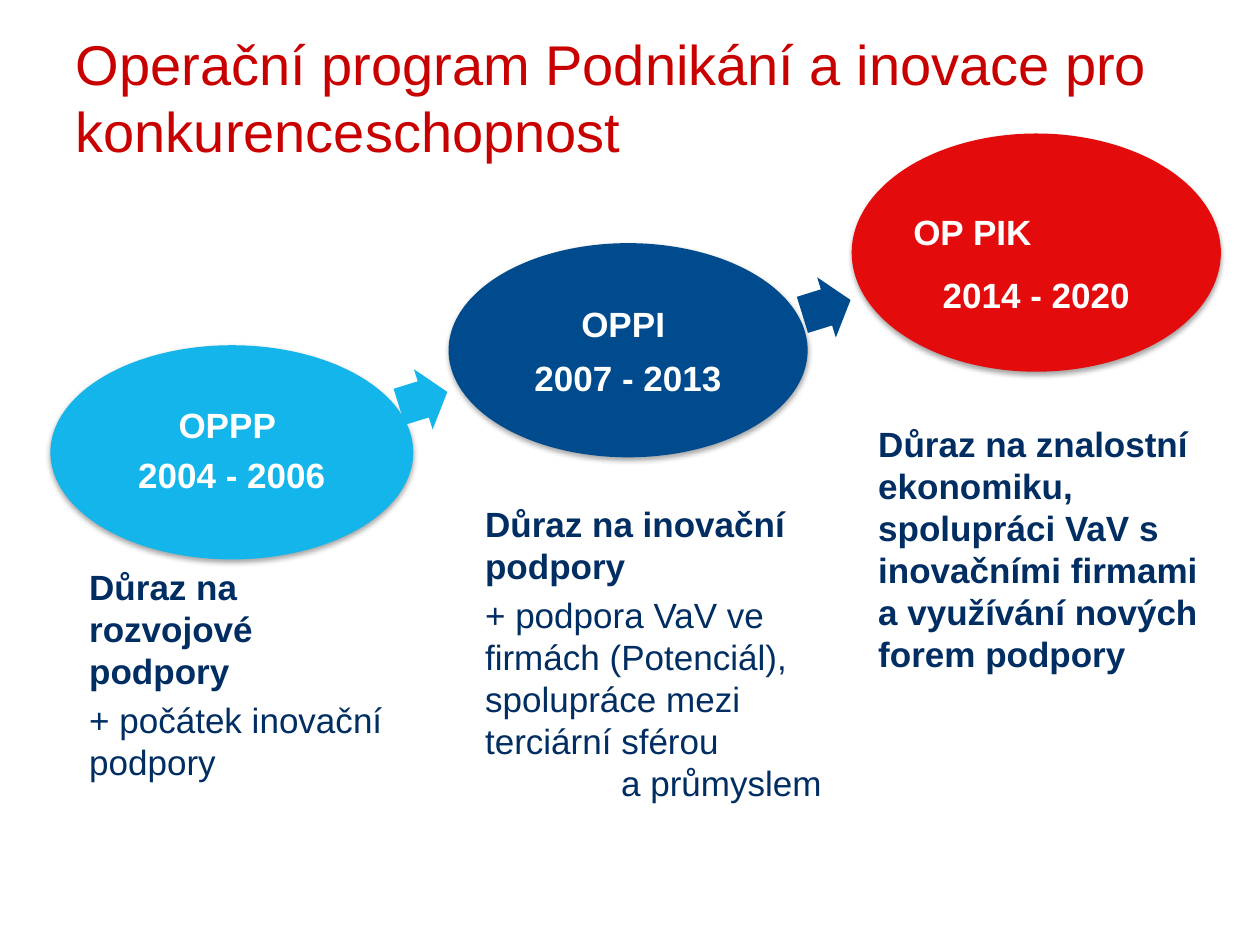
from lxml.etree import SubElement
from pptx import Presentation
from pptx.dml.color import RGBColor
from pptx.enum.shapes import MSO_SHAPE
from pptx.enum.text import MSO_ANCHOR, MSO_AUTO_SIZE, PP_ALIGN
from pptx.oxml.ns import qn
from pptx.util import Inches, Pt

THEME = {
    "font": "Arial",
    "title_size": Pt(32),
    "text_size": Pt(20),
    "title": RGBColor.from_string("C90000"),
    "text": RGBColor.from_string("002D62"),
    "on_fill": RGBColor.from_string("FFFFFF"),
    "light_blue": RGBColor.from_string("13B5EA"),
    "dark_blue": RGBColor.from_string("004B8D"),
    "red": RGBColor.from_string("E30B0B"),
    "shadow": "000000",
}


def add_text(paragraph, text, color, size=THEME["text_size"], bold=False):
    run = paragraph.add_run()
    run.text = text
    run.font.name = THEME["font"]
    run.font.size = size
    run.font.bold = bold
    run.font.color.rgb = color


def add_filled_shape(kind, box, color):
    shape = slide.shapes.add_shape(kind, *map(Inches, box))
    shape.shadow.inherit = False
    shape.fill.solid()
    shape.fill.fore_color.rgb = color
    shape.line.fill.background()
    return shape


presentation = Presentation()
presentation.slide_width = Inches(10)
presentation.slide_height = Inches(7.5)
slide = presentation.slides.add_slide(presentation.slide_layouts[5])

# Title
title = slide.shapes.title
title.left, title.top, title.width, title.height = map(Inches, (0.5, 0.3, 8.99, 0.93))
title.text_frame.auto_size = MSO_AUTO_SIZE.NONE
title.text_frame.vertical_anchor = MSO_ANCHOR.MIDDLE
paragraph = title.text_frame.paragraphs[0]
paragraph.alignment = PP_ALIGN.LEFT
add_text(paragraph, "Operační program Podnikání a inovace pro konkurenceschopnost",
         THEME["title"], THEME["title_size"])

# Programme ovals: box, colour, line spacing, space after, name alignment, lines
programmes = [
    ((0.4, 2.74, 2.88, 1.7), "light_blue", 0.9, 7, PP_ALIGN.CENTER, ("OPPP ", "2004 - 2006")),
    ((3.56, 1.93, 2.85, 1.7), "dark_blue", 1.0, 7, PP_ALIGN.CENTER, ("OPPI ", "2007 - 2013")),
    ((6.76, 1.06, 2.93, 1.89), "red", 1.5, 0, PP_ALIGN.LEFT, ("OP PIK", "2014 - 2020")),
]
for box, color, spacing, space_after, name_alignment, lines in programmes:
    oval = add_filled_shape(MSO_SHAPE.OVAL, box, THEME[color])

    # Soft shadow below the oval
    effects = oval._element.spPr.find(qn("a:effectLst"))
    shadow = SubElement(effects, qn("a:outerShdw"), blurRad=str(Pt(3.1)),
                        dist=str(Pt(1.8)), dir="5400000", rotWithShape="0")
    shadow_color = SubElement(shadow, qn("a:srgbClr"), val=THEME["shadow"])
    SubElement(shadow_color, qn("a:alpha"), val="35000")

    frame = oval.text_frame
    frame.word_wrap = True
    frame.vertical_anchor = MSO_ANCHOR.MIDDLE
    frame.margin_left = frame.margin_right = Inches(0)
    frame.margin_top = frame.margin_bottom = Inches(0)
    name, years = frame.paragraphs[0], frame.add_paragraph()
    name.alignment, years.alignment = name_alignment, PP_ALIGN.CENTER
    if name_alignment == PP_ALIGN.LEFT:
        name._p.get_or_add_pPr().set("marL", str(Inches(0.06)))
    for paragraph, line in zip((name, years), lines):
        paragraph.line_spacing = spacing
        paragraph.space_after = Pt(space_after)
        add_text(paragraph, line, THEME["on_fill"], bold=True)

# Descriptions: box, left and top margin, paragraphs (text, bold, space before, indent)
descriptions = [
    ((0.61, 4.44, 2.6, 1.73), 0.1, 0.05, [
        ("Důraz na rozvojové podpory", True, 0, 0),
        ("+ počátek inovační podpory", False, 4, 0)]),
    ((3.85, 3.6, 2.72, 2.6), 0, 0.39, [
        ("Důraz na inovační podpory", True, 0, 0),
        ("+ podpora VaV ve firmách (Potenciál), spolupráce mezi terciární sférou", False, 4, 0),
        ("a průmyslem", False, 0, 1.08)]),
    ((6.97, 2.96, 2.69, 2.6), 0, 0.39, [
        ("Důraz na znalostní ekonomiku, spolupráci VaV s inovačními firmami "
         "a využívání nových forem podpory", True, 0, 0)]),
]
for box, side_margin, top_margin, paragraphs in descriptions:
    frame = slide.shapes.add_textbox(*map(Inches, box)).text_frame
    frame.word_wrap = True
    frame.margin_left = frame.margin_right = Inches(side_margin)
    frame.margin_top = Inches(top_margin)
    for index, (text, bold, space_before, indent) in enumerate(paragraphs):
        paragraph = frame.add_paragraph() if index else frame.paragraphs[0]
        paragraph._p.get_or_add_pPr().set("marL", str(Inches(indent)))
        paragraph.space_before = Pt(space_before)
        add_text(paragraph, text, THEME["text"], bold=bold)

# Arrows between the programmes
for left, top, color in ((3.16, 2.92, "light_blue"), (6.36, 2.19, "dark_blue")):
    arrow = add_filled_shape(MSO_SHAPE.RIGHT_ARROW, (left, top, 0.4, 0.5), THEME[color])
    arrow.adjustments[0] = 0.6
    arrow.adjustments[1] = 0.5
    arrow.rotation = 342.8

presentation.save("out.pptx")
